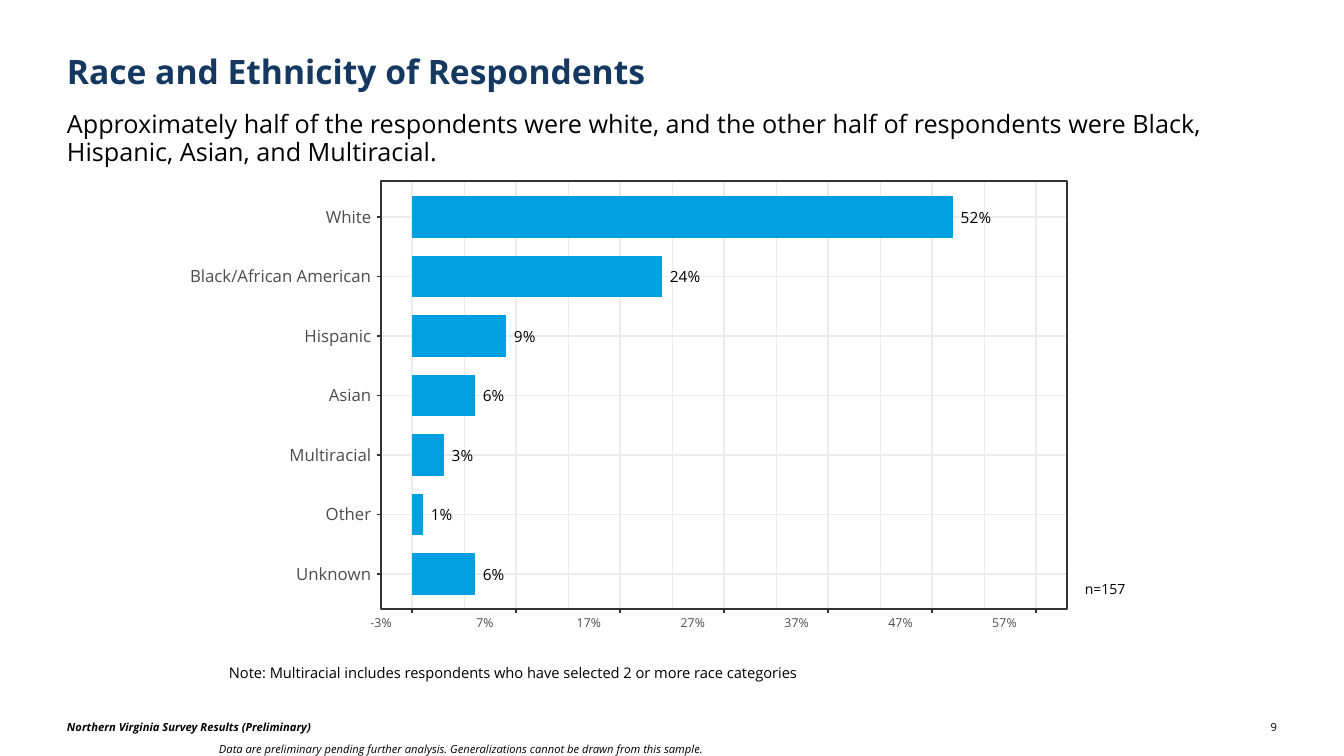
from lxml.etree import SubElement
from pptx import Presentation
from pptx.chart.data import CategoryChartData
from pptx.dml.color import RGBColor
from pptx.enum.chart import XL_CHART_TYPE, XL_LABEL_POSITION, XL_TICK_LABEL_POSITION, XL_TICK_MARK
from pptx.enum.shapes import MSO_CONNECTOR, MSO_SHAPE
from pptx.enum.text import MSO_ANCHOR, PP_ALIGN
from pptx.oxml import parse_xml
from pptx.oxml.ns import nsdecls, qn
from pptx.util import Emu, Pt

NAVY = RGBColor(0x14, 0x38, 0x5F)
BLUE = RGBColor(0x00, 0x9F, 0xDF)
BLACK = RGBColor(0, 0, 0)
GRAY = RGBColor(0x4D, 0x4D, 0x4D)
DARK = RGBColor(0x33, 0x33, 0x33)
PALE = RGBColor(0xEB, 0xEB, 0xEB)
FACE = "Open Sans"

SHARES = [
    ("White", 0.52),
    ("Black/African American", 0.24),
    ("Hispanic", 0.09),
    ("Asian", 0.06),
    ("Multiracial", 0.03),
    ("Other", 0.01),
    ("Unknown", 0.06),
]
TEXTS = [
    ("Race and Ethnicity of Respondents", (67, 1, 1210, 91), (0, 0),
     {"size": Pt(24), "bold": True}, NAVY,
     {"line_spacing": 0.9}, MSO_ANCHOR.BOTTOM),
    ("Approximately half of the respondents were white, and the other half of "
     "respondents were Black, Hispanic, Asian, and Multiracial.",
     (67, 112, 1210, 66), (0, 0), {"size": Pt(18)}, BLACK,
     {"line_spacing": 0.9, "space_after": Pt(4)}, MSO_ANCHOR.TOP),
    ("Note: Multiracial includes respondents who have selected 2 or more race categories",
     (219, 659, 738, 28), (10, 5), {"size": Pt(10.5)}, BLACK, {}, MSO_ANCHOR.TOP),
    ("n=157", (1075, 576, 65, 27), (10, 5), {"size": Pt(10)}, BLACK, {}, MSO_ANCHOR.TOP),
    ("Northern Virginia Survey Results (Preliminary)", (67, 720, 335, 36), (0, 0),
     {"size": Pt(8), "bold": True, "italic": True}, BLACK, {}, MSO_ANCHOR.TOP),
    ("Data are preliminary pending further analysis. Generalizations cannot be "
     "drawn from this sample.", (209, 737, 863, 37), (10, 5),
     {"size": Pt(8), "italic": True}, BLACK, {}, MSO_ANCHOR.TOP),
    ("9", (889, 720, 388, 36), (0, 0), {"size": Pt(8)}, BLACK,
     {"alignment": PP_ALIGN.RIGHT}, MSO_ANCHOR.TOP),
]

SCALE = 12192000 / 1344
LEFT, TOP, RIGHT, BOTTOM = 381, 181, 1067, 609
ZERO, STEP = 412, 104
FIRST, LAST = 217, 574
TICK = 4
CHART = (190, 181, 900, 460)


def px(n):
    return Emu(round(n * SCALE))


def assign(item, values):
    for name, value in values.items():
        setattr(item, name, value)


def write(slide, text, box, inset, font, color, layout, anchor):
    frame = slide.shapes.add_textbox(*map(px, box)).text_frame
    side, edge = map(px, inset)
    assign(frame, {"word_wrap": True, "vertical_anchor": anchor,
                   "margin_left": side, "margin_right": side,
                   "margin_top": edge, "margin_bottom": edge})
    para = frame.paragraphs[0]
    assign(para, layout)
    run = para.add_run()
    run.text = text
    assign(run.font, {"name": FACE, **font})
    run.font.color.rgb = color


def rule(slide, x1, y1, x2, y2, color, width=1.07):
    line = slide.shapes.add_connector(MSO_CONNECTOR.STRAIGHT, *map(px, (x1, y1, x2, y2)))
    line.line.color.rgb = color
    line.line.width = Pt(width)
    SubElement(line._element.spPr, qn("a:effectLst"))


def draw_grid(slide):
    pitch = (LAST - FIRST) / (len(SHARES) - 1)
    rows = [FIRST + pitch * i for i in range(len(SHARES))]
    cols = [ZERO + STEP * i for i in range(7)]
    for x in cols[:-1]:
        rule(slide, x + STEP / 2, TOP, x + STEP / 2, BOTTOM, PALE, 0.53)
    for y in rows:
        rule(slide, LEFT, y, RIGHT, y, PALE)
        rule(slide, LEFT - TICK, y, LEFT, y, DARK)
    for x in cols:
        rule(slide, x, TOP, x, BOTTOM, PALE)
        rule(slide, x, BOTTOM, x, BOTTOM + TICK, DARK)
    frame = slide.shapes.add_shape(
        MSO_SHAPE.RECTANGLE, *map(px, (LEFT, TOP, RIGHT - LEFT, BOTTOM - TOP)))
    frame.shadow.inherit = False
    frame.fill.background()
    frame.line.color.rgb = DARK
    frame.line.width = Pt(1.07)
    return pitch


def style(font, size, color):
    assign(font, {"name": FACE, "size": Pt(size), "bold": False})
    font.color.rgb = color


def place_plot(chart, pitch):
    x, y, w, h = CHART
    spots = {"x": (LEFT - x) / w, "y": (FIRST - pitch / 2 - y) / h,
             "w": (RIGHT - LEFT) / w, "h": pitch * len(SHARES) / h}
    modes = "".join(f'<c:{key}Mode val="edge"/>' for key in "xy")
    sizes = "".join(f'<c:{key} val="{val:.4f}"/>' for key, val in spots.items())
    area = chart._chartSpace.chart.plotArea
    for old in area.findall(qn("c:layout")):
        area.remove(old)
    area.insert(0, parse_xml(
        f'<c:layout {nsdecls("c")}><c:manualLayout><c:layoutTarget val="inner"/>'
        f'{modes}{sizes}</c:manualLayout></c:layout>'))


def draw_chart(slide, pitch):
    data = CategoryChartData(number_format="0%")
    names, values = zip(*reversed(SHARES))
    data.categories = names
    data.add_series("Share of respondents", values)
    chart = slide.shapes.add_chart(XL_CHART_TYPE.BAR_CLUSTERED, *map(px, CHART), data).chart
    assign(chart, {"has_legend": False, "has_title": False})
    style(chart.font, 11, BLACK)
    plot = chart.plots[0]
    assign(plot, {"gap_width": 43, "vary_by_categories": False, "has_data_labels": True})
    fill = plot.series[0].format.fill
    fill.solid()
    fill.fore_color.rgb = BLUE
    assign(plot.data_labels, {"show_value": True, "position": XL_LABEL_POSITION.OUTSIDE_END,
                              "number_format": "_-0%", "number_format_is_linked": False})
    style(plot.data_labels.font, 11, BLACK)
    for axis, size, mark in ((chart.category_axis, 12, XL_TICK_MARK.NONE),
                             (chart.value_axis, 8.8, XL_TICK_MARK.OUTSIDE)):
        assign(axis, {"has_major_gridlines": False, "major_tick_mark": mark,
                      "minor_tick_mark": XL_TICK_MARK.NONE,
                      "tick_label_position": XL_TICK_LABEL_POSITION.LOW})
        axis.format.line.fill.background()
        style(axis.tick_labels.font, size, GRAY)
    assign(chart.value_axis, {"minimum_scale": -0.03, "maximum_scale": 0.63, "major_unit": 0.1})
    assign(chart.value_axis.tick_labels, {"number_format": "0%", "number_format_is_linked": False})
    place_plot(chart, pitch)


def main():
    deck = Presentation()
    assign(deck, {"slide_width": px(1344), "slide_height": px(756)})
    slide = deck.slides.add_slide(deck.slide_layouts[6])
    draw_chart(slide, draw_grid(slide))
    for entry in TEXTS:
        write(slide, *entry)
    deck.save("out.pptx")


if __name__ == "__main__":
    main()
